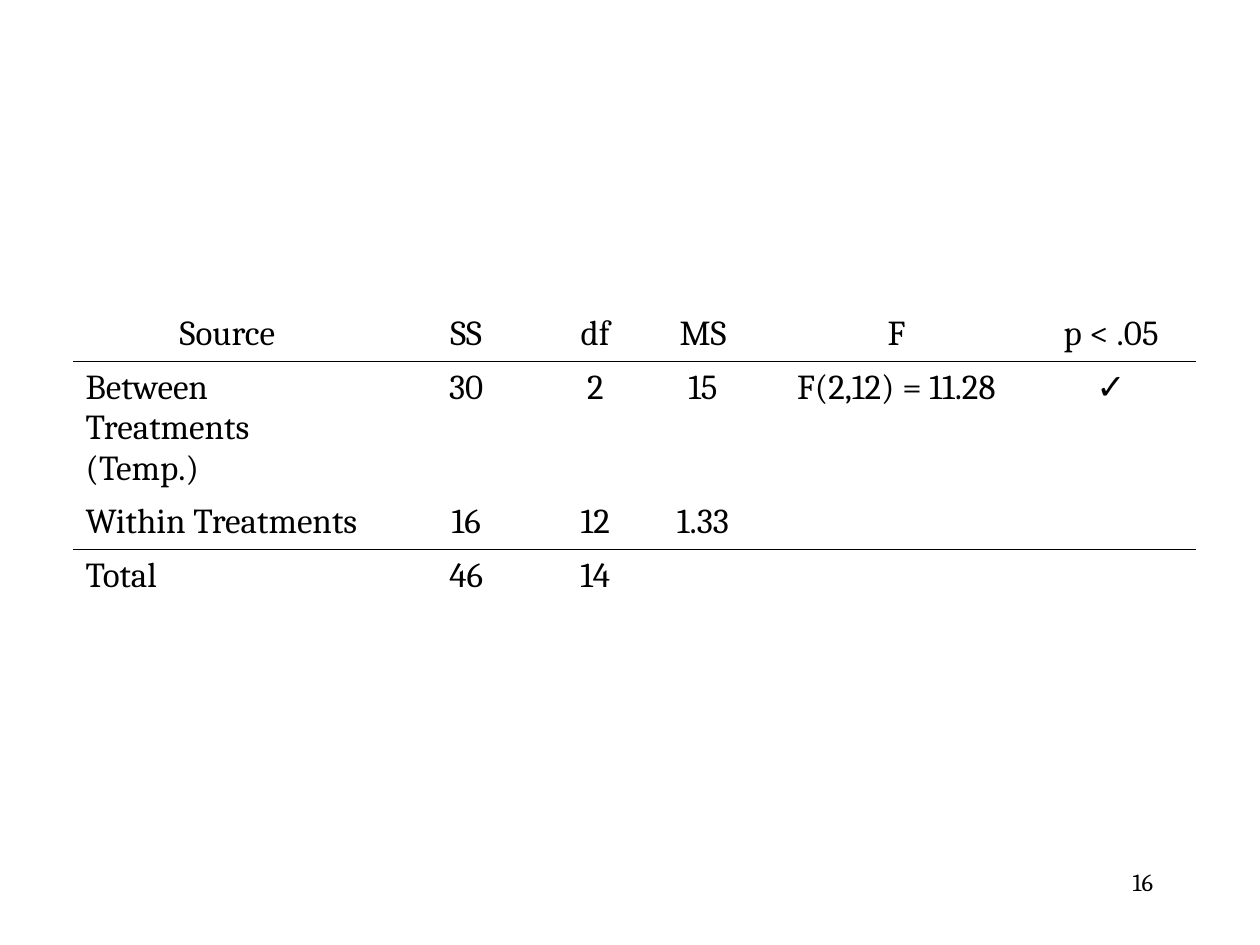
from lxml import etree
from pptx import Presentation
from pptx import util as u
from pptx.dml.color import RGBColor
from pptx.enum import text
from pptx.oxml.ns import qn

COLORS = {"ink": "000000", "page": "FFFFFF"}
WIDTHS = [2.45, 1.34, 0.71, 1, 2.07, 1.34]
HEIGHTS = [0.43, 0.77, 0.43, 0.43]
ANOVA = [
    ["Source", "SS", "df", "MS", "F", "p < .05"],
    ["Between Treatments (Temp.)", "30", "2", "15", "F(2,12) = 11.28", "✓"],
    ["Within Treatments", "16", "12", "1.33", "", ""],
    ["Total", "46", "14", "", "", ""],
]
RULED_ROWS = {0, 2}


class SlideBuilder:
    """Hold the text style and the current page, and add elements to it."""

    def __init__(self, page, font="Cambria"):
        self.page = page
        self.font = font
        page.background.fill.solid()
        page.background.fill.fore_color.rgb = RGBColor.from_string(COLORS["page"])

    def set_text(self, frame, words, size, align, font=None):
        para = frame.paragraphs[0]
        para.text = words
        para.alignment = align
        para.font.name = font or self.font
        para.font.size = u.Pt(size)
        para.font.color.rgb = RGBColor.from_string(COLORS["ink"])

    def label(self, left, top, width, height, words, size, align):
        box = self.page.shapes.add_textbox(*map(u.Inches, (left, top, width, height)))
        box.text_frame.word_wrap = True
        self.set_text(box.text_frame, words, size, align)

    def borders(self, cell, ruled_sides):
        properties = cell._tc.get_or_add_tcPr()
        for side in "LRTB":
            line = etree.SubElement(properties, qn(f"a:ln{side}"), w=str(u.Pt(1)))
            if side in ruled_sides:
                fill = etree.SubElement(line, qn("a:solidFill"))
                etree.SubElement(fill, qn("a:srgbClr"), val=COLORS["ink"])
            else:
                etree.SubElement(line, qn("a:noFill"))

    def table(self, left, top, widths, heights, rows, ruled_rows):
        size = (left, top, sum(widths), sum(heights))
        table = self.page.shapes.add_table(
            len(rows), len(widths), *map(u.Inches, size)).table
        table.first_row = table.horz_banding = False
        for column, width in zip(table.columns, widths):
            column.width = u.Inches(width)
        for r, (row, height) in enumerate(zip(rows, heights)):
            table.rows[r].height = u.Inches(height)
            sides = ("B" if r in ruled_rows else "") + ("T" if r - 1 in ruled_rows else "")
            for c, words in enumerate(row):
                cell = table.cell(r, c)
                self.borders(cell, sides)
                cell.fill.background()
                align = text.PP_ALIGN.LEFT if r and not c else text.PP_ALIGN.CENTER
                font = "Arial" if words == "✓" else None
                self.set_text(cell.text_frame, words, 20, align, font)


def main():
    deck = Presentation()
    deck.slide_width, deck.slide_height = u.Inches(10), u.Inches(7.5)
    builder = SlideBuilder(deck.slides.add_slide(deck.slide_layouts[6]))
    builder.table(0.58, 2.44, WIDTHS, HEIGHTS, ANOVA, RULED_ROWS)
    builder.label(7.17, 6.83, 2.08, 0.5, "16", 14, text.PP_ALIGN.RIGHT)
    deck.save("out.pptx")


if __name__ == "__main__":
    main()
